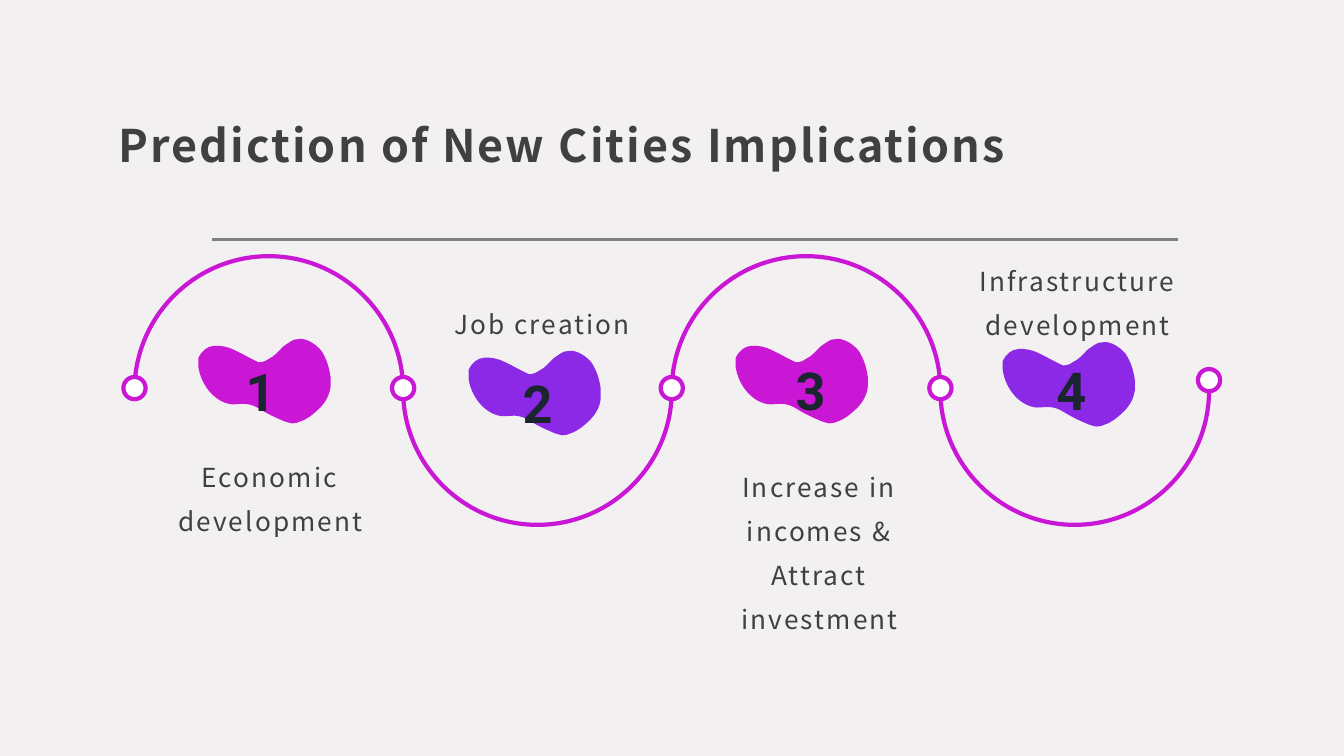
import pptx
import pptx.util
import pptx.dml.color
import pptx.enum.shapes
import pptx.enum.text
import pptx.oxml.ns
from lxml import etree

Cm = pptx.util.Cm
Pt = pptx.util.Pt
qn = pptx.oxml.ns.qn
ALIGN = pptx.enum.text.PP_ALIGN

MAGENTA, PURPLE, WHITE = "C917D5", "8C29E7", "FFFFFF"
BACKGROUND, RULE_GREY, TEXT_GREY, NUMBER_INK = "F3F0F1", "808080", "404040", "1B252F"
BODY_FONT, NUMBER_FONT = "Noto Sans CJK JP", "Roboto"

TITLE = "Prediction of New Cities Implications"
TITLE_BOX = (2.64, 2.21, 28.58, 2.24)
RULE = (5.33, 6.04, 29.69, 6.04)

STEPS = [
    {"text": "Economic development", "box": (3.35, 10.97, 6.58, 4.6), "right": 0.42,
     "blob": (5.28, 8.74), "number": (5.44, 8.47), "color": MAGENTA},
    {"text": "Job creation", "box": (10.03, 7.11, 6.83, 1.75), "right": 0.34,
     "blob": (12.09, 9.04), "number": (12.42, 8.77), "color": PURPLE},
    {"text": "Increase in incomes & Attract investment", "box": (17.15, 11.23, 6.58, 4.27),
     "right": 0.34, "blob": (18.82, 8.74), "number": (19.3, 8.45), "color": MAGENTA},
    {"text": "Infrastructure development", "box": (23.54, 6.03, 6.81, 2.44), "right": 0.34,
     "blob": (25.55, 8.82), "number": (25.87, 8.45), "color": PURPLE},
]
NUMBER_SIZE = (1.91, 2.08)

WAVE_LEFT, WAVE_MIDDLE, WAVE_PITCH = 3.39, 9.84, 6.77
DOT_SIZE = 0.56
DOT_MIDDLES = [9.78, 9.78, 9.78, 9.78, 9.58]
CIRCLE_PULL = 0.55

BLOB_CURVES = [
    ((-0.08, 0.03), (-0.15, 0.08), (-0.2, 0.15)),
    ((-0.23, 0.18), (-0.25, 0.23), (-0.28, 0.28)),
    ((-0.28, 0.36), (-0.28, 0.43), (-0.28, 0.51)),
    ((-0.2, 1.02), (0.18, 1.42), (0.58, 1.45)),
    ((0.74, 1.45), (0.86, 1.42), (0.99, 1.45)),
    ((1.12, 1.47), (1.24, 1.55), (1.37, 1.63)),
    ((1.5, 1.7), (1.65, 1.78), (1.78, 1.83)),
    ((1.88, 1.88), (1.98, 1.91), (2.08, 1.93)),
    ((2.16, 1.93), (2.24, 1.91), (2.29, 1.88)),
    ((2.39, 1.85), (2.46, 1.8), (2.54, 1.75)),
    ((2.77, 1.57), (3, 1.37), (3.05, 1.02)),
    ((3.05, 0.94), (3.05, 0.86), (3.05, 0.76)),
    ((3.02, 0.53), (2.95, 0.3), (2.82, 0.1)),
    ((2.67, -0.08), (2.46, -0.2), (2.29, -0.2)),
    ((2.24, -0.2), (2.18, -0.18), (2.13, -0.18)),
    ((2.03, -0.13), (1.96, -0.08), (1.85, 0)),
    ((1.75, 0.1), (1.65, 0.23), (1.5, 0.3)),
    ((1.47, 0.32), (1.43, 0.34), (1.4, 0.36)),
    ((1.35, 0.38), (1.3, 0.39), (1.24, 0.39)),
    ((0.99, 0.28), (0.76, 0.13), (0.51, 0.03)),
    ((0.33, -0.03), (0.15, -0.05), (0, 0)),
]


def rgb(value):
    return pptx.dml.color.RGBColor.from_string(value)


def write(shape, text, *, size, font=BODY_FONT, color=TEXT_GREY, bold=False, align=ALIGN.CENTER,
          leading=1.4, before=0, tracking=0, margin=0, right=0.34):
    frame = shape.text_frame
    frame.word_wrap = True
    frame.auto_size = pptx.enum.text.MSO_AUTO_SIZE.NONE
    frame.vertical_anchor = pptx.enum.text.MSO_ANCHOR.TOP
    frame.margin_left = frame.margin_top = frame.margin_bottom = Cm(0.34)
    frame.margin_right = Cm(right)
    paragraph = frame.paragraphs[0]
    paragraph.alignment = align
    paragraph.line_spacing = leading
    paragraph.space_before = Pt(before)
    properties = paragraph._p.get_or_add_pPr()
    properties.set("marL", str(Cm(margin)))
    properties.set("indent", "0")
    run = paragraph.add_run()
    run.text = text
    run.font.name = font
    run.font.size = Pt(size)
    run.font.bold = bold
    run.font.color.rgb = rgb(color)
    run._r.get_or_add_rPr().set("spc", str(round(tracking * 100)))


def paint(shape, fill=None, line=None):
    shape.shadow.inherit = False
    if fill:
        shape.fill.solid()
        shape.fill.fore_color.rgb = rgb(fill)
    else:
        shape.fill.background()
    if line:
        shape.line.color.rgb = rgb(line)
        shape.line.width = Pt(3)
    else:
        shape.line.fill.background()


def add_curves(slide, left, top, curves, *, closed=False, **colors):
    builder = slide.shapes.build_freeform(Cm(left), Cm(top))
    points = [(Cm(left + x), Cm(top + y)) for curve in curves for x, y in curve]
    builder.add_line_segments(points, close=closed)
    shape = builder.convert_to_shape()
    segments = list(shape._element.iter(qn("a:lnTo")))
    for first, second, end in zip(segments[::3], segments[1::3], segments[2::3]):
        bezier = etree.Element(qn("a:cubicBezTo"))
        first.addprevious(bezier)
        for segment in (first, second, end):
            bezier.append(segment[0])
            segment.getparent().remove(segment)
    paint(shape, **colors)


def add_rule(slide):
    rule = slide.shapes.add_connector(pptx.enum.shapes.MSO_CONNECTOR.STRAIGHT, *map(Cm, RULE))
    rule.line.color.rgb = rgb(RULE_GREY)
    rule.line.width = Pt(2)
    etree.SubElement(rule._element.spPr, qn("a:effectLst"))


def add_wave(slide):
    radius = WAVE_PITCH / 2
    pull = radius * CIRCLE_PULL
    for index in range(len(STEPS)):
        side = -1 if index % 2 == 0 else 1
        peak = side * radius
        curves = [
            ((0, side * pull), (radius - pull, peak), (radius, peak)),
            ((radius + pull, peak), (WAVE_PITCH, side * pull), (WAVE_PITCH, 0)),
        ]
        add_curves(slide, WAVE_LEFT + index * WAVE_PITCH, WAVE_MIDDLE, curves, line=MAGENTA)
    for index, middle in enumerate(DOT_MIDDLES):
        dot = slide.shapes.add_shape(
            pptx.enum.shapes.MSO_SHAPE.OVAL,
            Cm(WAVE_LEFT + index * WAVE_PITCH - DOT_SIZE / 2),
            Cm(middle - DOT_SIZE / 2), Cm(DOT_SIZE), Cm(DOT_SIZE))
        paint(dot, fill=WHITE, line=MAGENTA)


def main():
    presentation = pptx.Presentation()
    presentation.slide_width, presentation.slide_height = Cm(33.87), Cm(19.05)
    slide = presentation.slides.add_slide(presentation.slide_layouts[5])
    slide.background.fill.solid()
    slide.background.fill.fore_color.rgb = rgb(BACKGROUND)

    title = slide.shapes.title
    title.left, title.top, title.width, title.height = map(Cm, TITLE_BOX)
    write(title, TITLE, size=32, bold=True, align=ALIGN.LEFT, leading=1.3, tracking=1.5)

    add_rule(slide)
    for step in STEPS:
        label = slide.shapes.add_textbox(*map(Cm, step["box"]))
        write(label, step["text"], size=18.7, before=9.3, tracking=1.5, margin=0.43,
              right=step["right"])
        add_curves(slide, *step["blob"], BLOB_CURVES, closed=True, fill=step["color"])
    add_wave(slide)
    for number, step in enumerate(STEPS, 1):
        box = slide.shapes.add_textbox(*map(Cm, step["number"] + NUMBER_SIZE))
        write(box, str(number), size=37.3, font=NUMBER_FONT, color=NUMBER_INK, bold=True,
              leading=1.15, margin=0.43, right=0.42)

    presentation.save("out.pptx")


if __name__ == "__main__":
    main()
